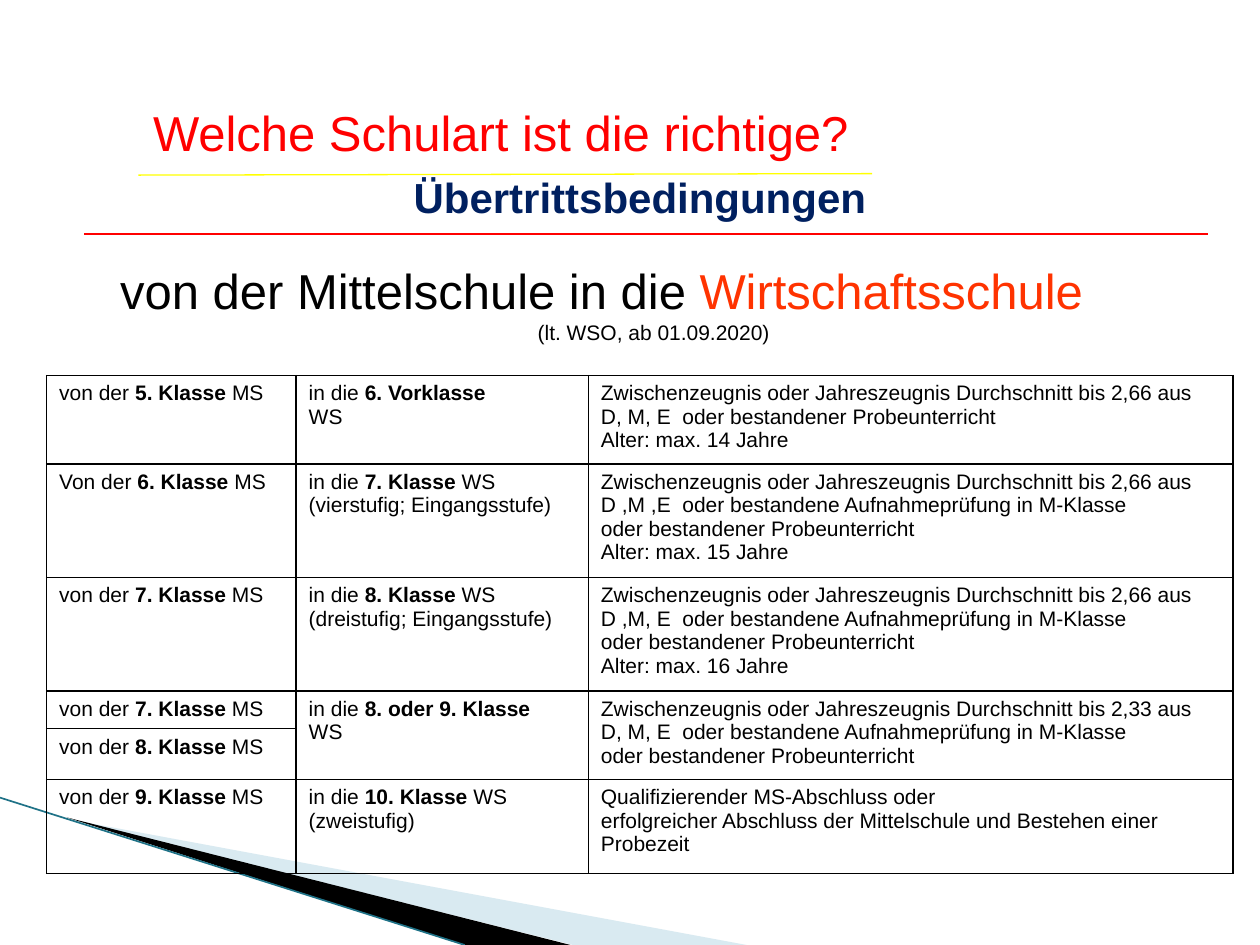
from dataclasses import dataclass

from lxml import etree
from pptx import Presentation
from pptx.dml.color import RGBColor
from pptx.enum.shapes import MSO_CONNECTOR
from pptx.enum.text import MSO_ANCHOR, PP_ALIGN
from pptx.oxml.ns import qn
from pptx.util import Cm, Pt

STRAIGHT = MSO_CONNECTOR.STRAIGHT
CENTER = PP_ALIGN.CENTER
LEFT = PP_ALIGN.LEFT
TOP = MSO_ANCHOR.TOP
MIDDLE = MSO_ANCHOR.MIDDLE
FONT = "Arial"
COLORS = {
    "black": "000000",
    "red": "FF0000",
    "orange": "FF3300",
    "yellow": "FFFF00",
    "navy": "002060",
    "pale_blue": "A0CBDC",
    "teal": "1F7287",
}


@dataclass
class Line:
    start: tuple[float, float]
    end: tuple[float, float]
    color: str
    width: float = 0.75


@dataclass
class Wedge:
    points: list[tuple[float, float]]
    color: str
    opacity: int = 100


@dataclass
class Admission:
    """One table row; asterisks enclose bold text, each string is a paragraph."""
    height: float
    origin: list[str]
    target: list[str]
    conditions: list[str]


WEDGES = [
    Wedge([(1.4, 16.52), (15.05, 19.05), (11.55, 19.05)], "pale_blue", 40),
    Wedge([(1.35, 16.48), (11.5, 19.05), (9.35, 19.05)], "black"),
]
LINES = [
    Line((0, 16.08), (9.37, 19.05), "teal", 0.95),
    Line((2.79, 3.53), (17.58, 3.5), "yellow"),
    Line((1.7, 4.72), (24.36, 4.72), "red"),
]
COLUMN_WIDTHS = [5.03, 5.89, 13]
REPORT = "Zwischenzeugnis oder Jahreszeugnis Durchschnitt bis "
TRIAL = "oder bestandener Probeunterricht"
EXAM = "oder bestandene Aufnahmeprüfung in M-Klasse"
ADMISSIONS = [
    Admission(1.78, ["von der *5. Klasse *MS"], ["in die *6. Vorklasse\n*WS"],
              [REPORT + "2,66 aus", "D, M, E  " + TRIAL, "Alter: max. 14 Jahre"]),
    Admission(2.29, ["Von der *6. Klasse *MS"],
              ["in die *7. Klasse *WS", "(vierstufig; Eingangsstufe)"],
              [REPORT + "2,66 aus", "D ,M ,E  " + EXAM, TRIAL, "Alter: max. 15 Jahre"]),
    Admission(2.29, ["von der *7. Klasse* MS"],
              ["in die *8. Klasse* WS", "(dreistufig; Eingangsstufe)"],
              [REPORT + "2,66 aus", "D ,M, E  " + EXAM, TRIAL, "Alter: max. 16 Jahre"]),
    Admission(0.76, ["von der *7. Klasse* MS"], ["in die *8. oder 9. Klasse*", "WS"],
              [REPORT + "2,33 aus", "D, M, E  " + EXAM, TRIAL]),
    Admission(1.02, ["von der *8. Klasse* MS"], [], []),
    Admission(1.9, ["von der *9. Klasse* MS"], ["in die *10. Klasse* WS", "(zweistufig)"],
              ["Qualifizierender MS-Abschluss oder",
               "erfolgreicher Abschluss der Mittelschule und Bestehen einer Probezeit"]),
]


def rgb(name: str) -> RGBColor:
    return RGBColor.from_string(COLORS[name])


def place(shape, left: float, top: float, width: float, height: float) -> None:
    shape.left, shape.top = Cm(left), Cm(top)
    shape.width, shape.height = Cm(width), Cm(height)


def format_paragraph(paragraph, size: float, color: str, alignment=LEFT, bold=None) -> None:
    paragraph.alignment = alignment
    paragraph.space_before = Pt(0)
    font = paragraph.font
    font.name, font.size, font.bold = FONT, Pt(size), bold
    font.color.rgb = rgb(color)


def remove_bullet(paragraph, margin: float = 0) -> None:
    properties = paragraph._p.get_or_add_pPr()
    properties.set("marL", str(Cm(margin)))
    properties.set("indent", "0")
    etree.SubElement(properties, qn("a:buNone"))


def draw_wedge(slide, wedge: Wedge) -> None:
    corners = [(Cm(x), Cm(y)) for x, y in wedge.points]
    builder = slide.shapes.build_freeform(*corners[0])
    builder.add_line_segments(corners[1:], close=True)
    shape = builder.convert_to_shape()
    shape.shadow.inherit = False
    shape.fill.solid()
    shape.fill.fore_color.rgb = rgb(wedge.color)
    shape.line.fill.background()
    if wedge.opacity < 100:
        color = shape._element.spPr.find(qn("a:solidFill"))[0]
        etree.SubElement(color, qn("a:alpha"), val=str(wedge.opacity * 1000))


def draw_line(slide, line: Line) -> None:
    ends = [Cm(value) for value in line.start + line.end]
    connector = slide.shapes.add_connector(STRAIGHT, *ends)
    connector.line.color.rgb = rgb(line.color)
    connector.line.width = Pt(line.width)
    etree.SubElement(connector._element.spPr, qn("a:effectLst"))


def draw_borders(cell) -> None:
    properties = cell._tc.get_or_add_tcPr()
    for position, side in enumerate(("lnL", "lnR", "lnT", "lnB")):
        border = etree.Element(qn(f"a:{side}"), w=str(Pt(1)))
        fill = etree.SubElement(border, qn("a:solidFill"))
        etree.SubElement(fill, qn("a:srgbClr"), val=COLORS["black"])
        properties.insert(position, border)


def write_cell(cell, texts: list[str]) -> None:
    for index, text in enumerate(texts):
        frame = cell.text_frame
        paragraph = frame.add_paragraph() if index else frame.paragraphs[0]
        format_paragraph(paragraph, 12, "black")
        for part, content in enumerate(text.split("*")):
            if content:
                run = paragraph.add_run()
                run.text = content.rstrip("\n")
                run.font.bold = part % 2 == 1
            if content.endswith("\n"):
                paragraph.add_line_break()


def draw_table(slide, admissions: list[Admission]) -> None:
    heights = [admission.height for admission in admissions]
    frame = slide.shapes.add_table(
        len(admissions), len(COLUMN_WIDTHS), Cm(0.94), Cm(7.57),
        Cm(sum(COLUMN_WIDTHS)), Cm(sum(heights)))
    table = frame.table
    table.first_row = table.horz_banding = False
    for column, width in zip(table.columns, COLUMN_WIDTHS):
        column.width = Cm(width)
    for row, admission in zip(table.rows, admissions):
        row.height = Cm(admission.height)
        contents = (admission.origin, admission.target, admission.conditions)
        for cell, texts in zip(row.cells, contents):
            cell.fill.background()
            draw_borders(cell)
            write_cell(cell, texts)
    for column in (1, 2):
        table.cell(3, column).merge(table.cell(4, column))


def main() -> None:
    presentation = Presentation()
    presentation.slide_width, presentation.slide_height = Cm(25.4), Cm(19.05)
    slide = presentation.slides.add_slide(presentation.slide_layouts[1])

    # Background wedges and rules
    for wedge in WEDGES:
        draw_wedge(slide, wedge)
    for line in LINES:
        draw_line(slide, line)

    # Title
    title = slide.shapes.title
    place(title, 1.7, 1.93, 16.79, 1.45)
    title.text_frame.text = "Welche Schulart ist die richtige?"
    title.text_frame.vertical_anchor = MIDDLE
    format_paragraph(title.text_frame.paragraphs[0], 28, "red", CENTER)

    # School type and its regulation
    body = slide.placeholders[1]
    place(body, 1.9, 5.13, 22.56, 1.96)
    body.text_frame.vertical_anchor = TOP
    heading = body.text_frame.paragraphs[0]
    remove_bullet(heading, 0.27)
    format_paragraph(heading, 28, "black")
    heading.add_run().text = "von der Mittelschule in die "
    school = heading.add_run()
    school.text = "Wirtschaftsschule"
    school.font.color.rgb = rgb("orange")
    regulation = body.text_frame.add_paragraph()
    remove_bullet(regulation)
    regulation.text = "(lt. WSO, ab 01.09.2020)"
    format_paragraph(regulation, 12, "black", CENTER)

    # Admission conditions
    draw_table(slide, ADMISSIONS)

    # Subtitle
    subtitle = slide.shapes.add_textbox(Cm(6.5), Cm(3.33), Cm(12.8), Cm(1.27))
    subtitle.text_frame.word_wrap = True
    subtitle.text_frame.text = "Übertrittsbedingungen"
    format_paragraph(subtitle.text_frame.paragraphs[0], 24, "navy", CENTER, True)

    presentation.save("out.pptx")


if __name__ == "__main__":
    main()
